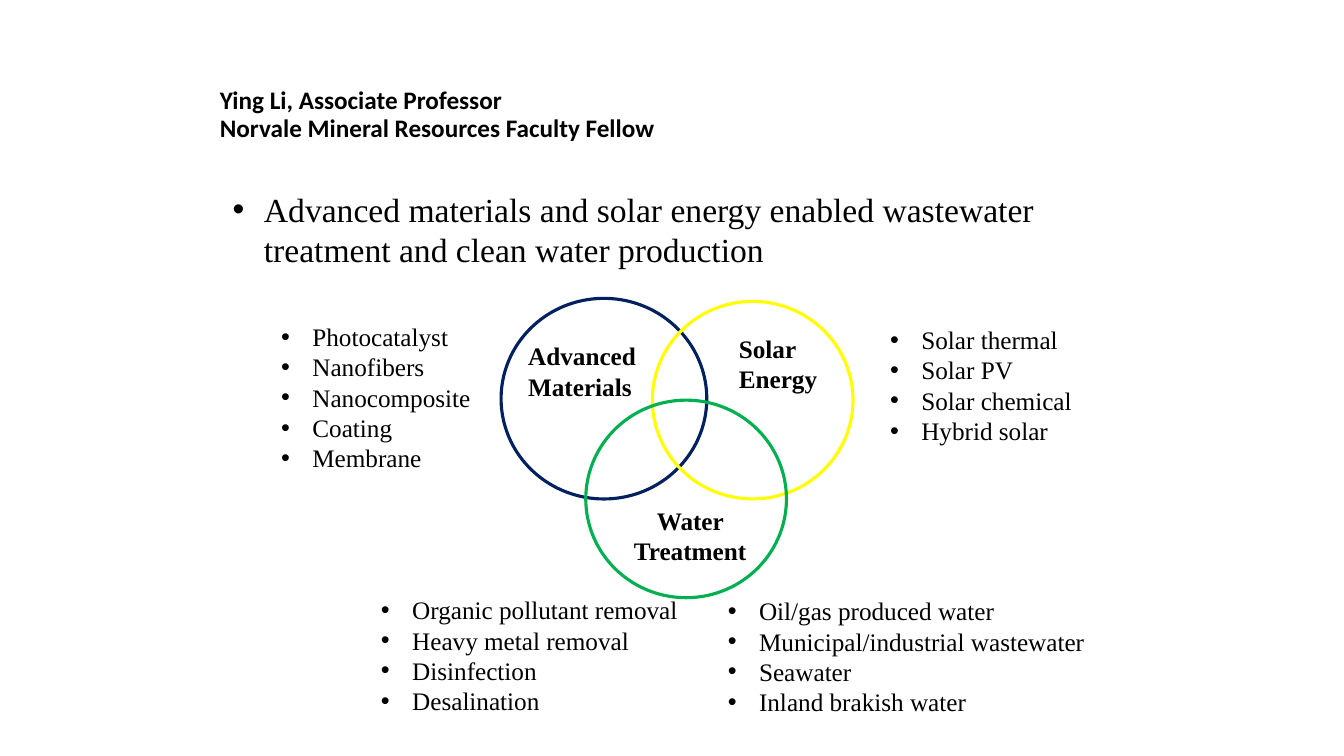
from dataclasses import dataclass

from lxml.etree import SubElement
from pptx import Presentation
from pptx.dml.color import RGBColor
from pptx.enum.shapes import MSO_SHAPE
from pptx.enum.text import MSO_ANCHOR, MSO_AUTO_SIZE, PP_ALIGN
from pptx.oxml.ns import qn
from pptx.util import Inches, Pt


@dataclass(frozen=True)
class Theme:
    text: RGBColor = RGBColor(0, 0, 0)
    navy: RGBColor = RGBColor(0x00, 0x20, 0x60)
    yellow: RGBColor = RGBColor(0xFF, 0xFF, 0x00)
    green: RGBColor = RGBColor(0x00, 0xB0, 0x50)
    title_font: str = "Calibri"
    body_font: str = "Times New Roman"
    body_size: Pt = Pt(18)
    lead_size: Pt = Pt(24)
    circle_line: Pt = Pt(2.25)
    bullet_indent: Inches = Inches(0.31)


THEME = Theme()

# Content: boxes are (left, top, width, height) in inches
TITLE_BOX = (2.08, 0.73, 9, 0.83)
TITLE_LINES = ("Ying Li, Associate Professor", "Norvale Mineral Resources Faculty Fellow")

LEAD_BOX = (2.21, 1.82, 8.23, 0.91)
LEAD = "Advanced materials and solar energy enabled wastewater treatment and clean water production"

CIRCLES = [
    ((4.97, 2.96, 2.04, 1.99), THEME.navy),
    ((6.47, 2.99, 1.99, 1.96), THEME.yellow),
    ((5.81, 3.97, 1.99, 1.96), THEME.green),
]
CIRCLE_LABELS = [
    ((5.14, 3.33, 1.7, 0.71), "Advanced Materials", PP_ALIGN.LEFT),
    ((7.23, 3.26, 1.24, 0.71), "Solar Energy", PP_ALIGN.LEFT),
    ((6.08, 4.96, 1.53, 0.71), "Water Treatment", PP_ALIGN.CENTER),
]
TOPIC_LISTS = [
    ((2.69, 3.14, 2.24, 1.62),
     ["Photocatalyst", "Nanofibers", "Nanocomposite", "Coating", "Membrane"]),
    ((8.73, 3.17, 2.24, 1.31),
     ["Solar thermal", "Solar PV", "Solar chemical", "Hybrid solar"]),
    ((3.68, 5.85, 3.59, 1.31),
     ["Organic pollutant removal", "Heavy metal removal", "Disinfection", "Desalination"]),
    ((7.12, 5.86, 3.92, 1.31),
     ["Oil/gas produced water", "Municipal/industrial wastewater", "Seawater",
      "Inland brakish water"]),
]


def to_inches(box):
    return [Inches(value) for value in box]


def set_font(paragraph, name, size, bold=False):
    font = paragraph.font
    font.name, font.size, font.bold = name, size, bold
    font.color.rgb = THEME.text


def add_bullet(paragraph):
    properties = paragraph._p.get_or_add_pPr()
    properties.set("marL", str(THEME.bullet_indent))
    properties.set("indent", str(-THEME.bullet_indent))
    SubElement(properties, qn("a:buFont"), typeface="Arial")
    SubElement(properties, qn("a:buChar"), char="•")


def add_text(slide, box, lines, size=THEME.body_size, bold=False, bullets=False,
             alignment=PP_ALIGN.LEFT):
    frame = slide.shapes.add_textbox(*to_inches(box)).text_frame
    frame.word_wrap = True
    frame.auto_size = MSO_AUTO_SIZE.SHAPE_TO_FIT_TEXT
    frame.text = "\n".join(lines)
    for paragraph in frame.paragraphs:
        paragraph.alignment = alignment
        if bullets:
            add_bullet(paragraph)
        set_font(paragraph, THEME.body_font, size, bold)


def add_title(slide):
    title = slide.shapes.title
    title.left, title.top, title.width, title.height = to_inches(TITLE_BOX)
    frame = title.text_frame
    frame.word_wrap = True
    frame.auto_size = MSO_AUTO_SIZE.NONE
    frame.vertical_anchor = MSO_ANCHOR.MIDDLE
    paragraph = frame.paragraphs[0]
    paragraph.text = "\v".join(TITLE_LINES)
    paragraph.alignment = PP_ALIGN.LEFT
    paragraph.line_spacing = 0.9
    set_font(paragraph, THEME.title_font, THEME.body_size, bold=True)


def add_circle(slide, box, color):
    circle = slide.shapes.add_shape(MSO_SHAPE.OVAL, *to_inches(box))
    circle.shadow.inherit = False
    circle.fill.background()
    circle.line.color.rgb = color
    circle.line.width = THEME.circle_line


def main():
    presentation = Presentation()
    presentation.slide_width, presentation.slide_height = Inches(13.33), Inches(7.5)
    slide = presentation.slides.add_slide(presentation.slide_layouts.get_by_name("Title Only"))

    # Heading and lead statement
    add_title(slide)
    add_text(slide, LEAD_BOX, [LEAD], THEME.lead_size, bullets=True)

    # Overlapping circles with their labels
    for box, color in CIRCLES:
        add_circle(slide, box, color)
    for box, label, alignment in CIRCLE_LABELS:
        add_text(slide, box, [label], bold=True, alignment=alignment)

    # Topic lists around the circles
    for box, topics in TOPIC_LISTS:
        add_text(slide, box, topics, bullets=True)

    presentation.save("out.pptx")


if __name__ == "__main__":
    main()
